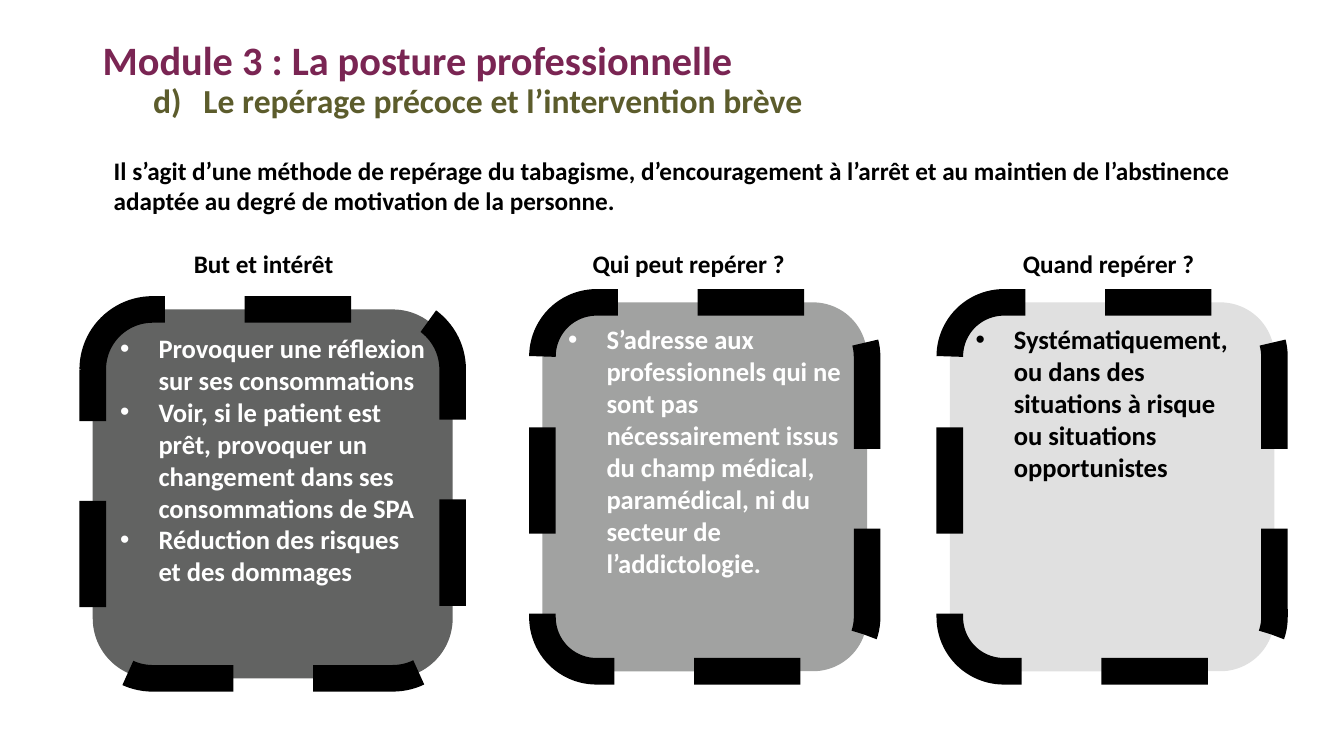
from lxml import etree
from pptx import Presentation
from pptx.dml.color import RGBColor
from pptx.enum.dml import MSO_LINE
from pptx.enum.shapes import MSO_SHAPE
from pptx.enum.text import MSO_ANCHOR as Anchor, PP_ALIGN as Align
from pptx.oxml.ns import qn
from pptx.util import Inches, Pt

COLORS = {
    "plum": "7A2553", "olive": "5C5C2C", "black": "000000", "white": "FFFFFF",
    "dark": "626362", "medium": "A1A2A1", "light": "E0E0E0",
}
FONT = "Calibri"
CARD_HEIGHT = 3.66
HEADING_TOP, HEADING_HEIGHT = 2.41, 0.4

TITLE = "Module 3 : La posture professionnelle"
SUBTITLE = "Le repérage précoce et l’intervention brève"
INTRO = ("Il s’agit d’une méthode de repérage du tabagisme, d’encouragement à l’arrêt "
         "et au maintien de l’abstinence adaptée au degré de motivation de la personne.")

# heading, heading (left, width), card (left, top, width), fill, text colour, points
COLUMNS = [
    ("But et intérêt", (0.7, 3.83), (0.92, 3.07, 3.57), "dark", "white", [
        "Provoquer une réflexion sur ses consommations",
        "Voir, si le patient est prêt, provoquer un changement dans ses consommations de SPA",
        "Réduction des risques et des dommages",
    ]),
    ("Qui peut repérer ?", (5.38, 2.9), (5.38, 3, 3.22), "medium", "white", [
        "S’adresse aux professionnels qui ne sont pas nécessairement issus du champ médical, "
        "paramédical, ni du secteur de l’addictologie.",
    ]),
    ("Quand repérer ?", (9.46, 3.07), (9.42, 3, 3.22), "light", "black", [
        "Systématiquement, ou dans des situations à risque ou situations opportunistes",
    ]),
]


def rgb(name):
    return RGBColor.from_string(COLORS[name])


def write(frame, lines, size, color, align=Align.LEFT, anchor=Anchor.TOP, spacing=None):
    """Fill a text frame with bold paragraphs and return them."""
    frame.word_wrap = True
    frame.vertical_anchor = anchor
    for index, line in enumerate(lines):
        paragraph = frame.add_paragraph() if index else frame.paragraphs[0]
        paragraph.alignment = align
        if spacing:
            paragraph.line_spacing = spacing
        run = paragraph.add_run()
        run.text = line
        run.font.name, run.font.size, run.font.bold = FONT, Pt(size), True
        run.font.color.rgb = rgb(color)
    return frame.paragraphs


def add_marker(paragraph, margin, hanging, tag, **attributes):
    """Give a paragraph a hanging bullet or automatic number."""
    properties = paragraph._p.get_or_add_pPr()
    properties.set("marL", str(Inches(margin)))
    properties.set("indent", str(-Inches(hanging)))
    if tag == "a:buChar":
        etree.SubElement(properties, qn("a:buFont"), typeface="Arial")
    etree.SubElement(properties, qn(tag), **attributes)


def add_text(slide, box, lines, size, color, **layout):
    frame = slide.shapes.add_textbox(*map(Inches, box)).text_frame
    return write(frame, lines, size, color, **layout)


def add_card(slide, box, fill, color, points):
    card = slide.shapes.add_shape(MSO_SHAPE.ROUNDED_RECTANGLE, *map(Inches, box))
    card.shadow.inherit = False
    card.fill.solid()
    card.fill.fore_color.rgb = rgb(fill)
    card.line.color.rgb = rgb("black")
    card.line.width = Pt(19)
    card.line.dash_style = MSO_LINE.DASH
    for paragraph in write(card.text_frame, points, 19, color):
        add_marker(paragraph, 0.38, 0.38, "a:buChar", char="•")


def main():
    deck = Presentation()
    deck.slide_width, deck.slide_height = Inches(13.33), Inches(7.5)
    slide = deck.slides.add_slide(deck.slide_layouts[6])

    for heading, (left, width), (card_left, top, card_width), fill, color, points in COLUMNS:
        add_card(slide, (card_left, top, card_width, CARD_HEIGHT), fill, color, points)
        add_text(slide, (left, HEADING_TOP, width, HEADING_HEIGHT), [heading], 18, "black",
                 align=Align.CENTER)

    subtitle = add_text(slide, (1.03, 0.79, 11.5, 0.71), [SUBTITLE], 24, "olive", spacing=0.9)
    add_marker(subtitle[0], 0.89, 0.5, "a:buAutoNum", type="alphaLcParenR", startAt="4")
    add_text(slide, (0.92, 0.4, 11.5, 0.49), [TITLE], 28.8, "plum",
             anchor=Anchor.MIDDLE, spacing=0.7)
    add_text(slide, (1.03, 1.49, 12.1, 0.71), [INTRO], 18, "black")

    deck.save("out.pptx")


if __name__ == "__main__":
    main()
